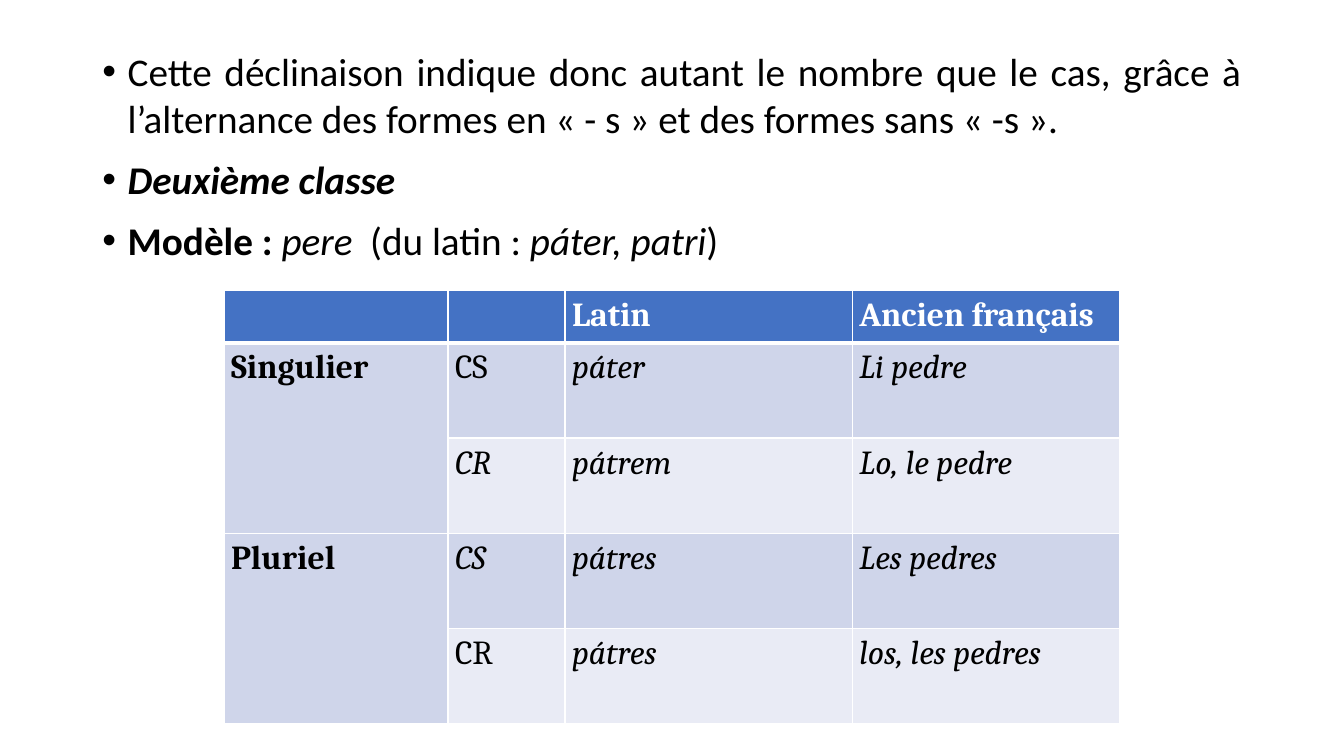
from lxml import etree
from pptx import Presentation
from pptx.dml.color import RGBColor
from pptx.enum.text import MSO_ANCHOR, MSO_AUTO_SIZE, PP_ALIGN
from pptx.oxml.ns import qn
from pptx.util import Inches, Pt

JUSTIFY = PP_ALIGN.JUSTIFY
TOP = MSO_ANCHOR.TOP
NO_FIT = MSO_AUTO_SIZE.NONE

COLORS = {"text": "000000", "white": "FFFFFF", "header": "4472C4",
          "dark_band": "CFD5EA", "light_band": "E9EBF5"}

# Each run is (text, style), where style holds "b" for bold and "i" for italic.
BULLETS = [
    [("Cette déclinaison indique donc autant le nombre que le cas, grâce à "
      "l’alternance des formes en « - s » et des formes sans « -s ».", "")],
    [("Deuxième classe", "bi")],
    [("Modèle : ", "b"), ("pere  ", "i"), ("(du latin : ", ""),
     ("páter, patri", "i"), (")", "")],
]

DECLENSION = [
    [None, None, ("Latin", "b"), ("Ancien français", "b")],
    [("Singulier", "b"), ("CS", ""), ("páter", "i"), ("Li pedre", "i")],
    [None, ("CR", "i"), ("pátrem", "i"), ("Lo, le pedre", "i")],
    [("Pluriel", "b"), ("CS", "i"), ("pátres", "i"), ("Les pedres", "i")],
    [None, ("CR", ""), ("pátres", "i"), ("los, les pedres", "i")],
]


class Deck:
    """Style and current slide, laid out on a grid of 24 columns by 18 rows."""

    def __init__(self):
        self.prs = Presentation()
        self.prs.slide_width = Inches(13.33)
        self.prs.slide_height = Inches(7.5)
        self.s = self.prs.slides.add_slide(self.prs.slide_layouts[1])

    def x(self, cols):
        return round(self.prs.slide_width * cols / 24)

    def y(self, rows):
        return round(self.prs.slide_height * rows / 18)

    def box(self, left, top, width, height):
        return self.x(left), self.y(top), self.x(width), self.y(height)

    def run(self, p, text, style, font, size, color):
        r = p.add_run()
        r.text = text
        r.font.name = font
        r.font.size = Pt(size)
        r.font.bold = "b" in style
        r.font.italic = "i" in style
        r.font.color.rgb = RGBColor.from_string(COLORS[color])

    def remove_title(self):
        title = self.s.shapes.title.element
        title.getparent().remove(title)

    def bullets(self, items, *place):
        sp = self.s.placeholders[1]
        sp.left, sp.top, sp.width, sp.height = self.box(*place)
        tf = sp.text_frame
        tf.word_wrap = True
        tf.auto_size = NO_FIT
        tf.vertical_anchor = TOP
        for i, runs in enumerate(items):
            p = tf.add_paragraph() if i else tf.paragraphs[0]
            p.alignment = JUSTIFY
            p.line_spacing = 1.0
            p.space_before = Pt(10)
            pPr = p._p.get_or_add_pPr()
            pPr.set("marL", str(Inches(0.25)))
            pPr.set("indent", str(-Inches(0.25)))
            etree.SubElement(pPr, qn("a:buFont"), typeface="Arial")
            etree.SubElement(pPr, qn("a:buChar"), char="•")
            for text, style in runs:
                self.run(p, text, style, "Calibri", 28, "text")

    def borders(self, cell, bottom):
        tcPr = cell._tc.get_or_add_tcPr()
        sides = {"lnL": 1, "lnR": 1, "lnT": 1, "lnB": bottom}
        for i, (side, width) in enumerate(sides.items()):
            ln = etree.Element(qn(f"a:{side}"), w=str(Pt(width)))
            fill = etree.SubElement(ln, qn("a:solidFill"))
            etree.SubElement(fill, qn("a:srgbClr"), val=COLORS["white"])
            tcPr.insert(i, ln)

    def cell(self, cell, content, fill, color, bottom):
        cell.margin_left = cell.margin_right = Inches(0.07)
        cell.margin_top = cell.margin_bottom = 0
        cell.fill.solid()
        cell.fill.fore_color.rgb = RGBColor.from_string(COLORS[fill])
        self.borders(cell, bottom)
        if content:
            p = cell.text_frame.paragraphs[0]
            p.alignment = JUSTIFY
            p.line_spacing = 1.15
            self.run(p, *content, "Cambria", 24, color)

    def table(self, data, left, top, col_widths, row_heights):
        place = self.box(left, top, sum(col_widths), sum(row_heights))
        frame = self.s.shapes.add_table(len(data), len(data[0]), *place)
        tbl = frame.table
        for col, width in zip(tbl.columns, col_widths):
            col.width = self.x(width)
        for row, height in zip(tbl.rows, row_heights):
            row.height = self.y(height)
        for i, row in enumerate(data):
            band = "dark_band" if i % 2 else "light_band"
            look = (band, "text", 1) if i else ("header", "white", 3)
            for j, content in enumerate(row):
                self.cell(tbl.cell(i, j), content, *look)
        for i in range(1, len(data), 2):
            tbl.cell(i, 0).merge(tbl.cell(i + 1, 0))


def main():
    deck = Deck()
    deck.remove_title()
    deck.bullets(BULLETS, 1.65, 1, 20.7, 16.22)
    deck.table(DECLENSION, 4, 6.91, [4, 2.09, 5.13, 4.78],
               [1.25] + [2.27] * 4)
    deck.prs.save("out.pptx")


if __name__ == "__main__":
    main()
